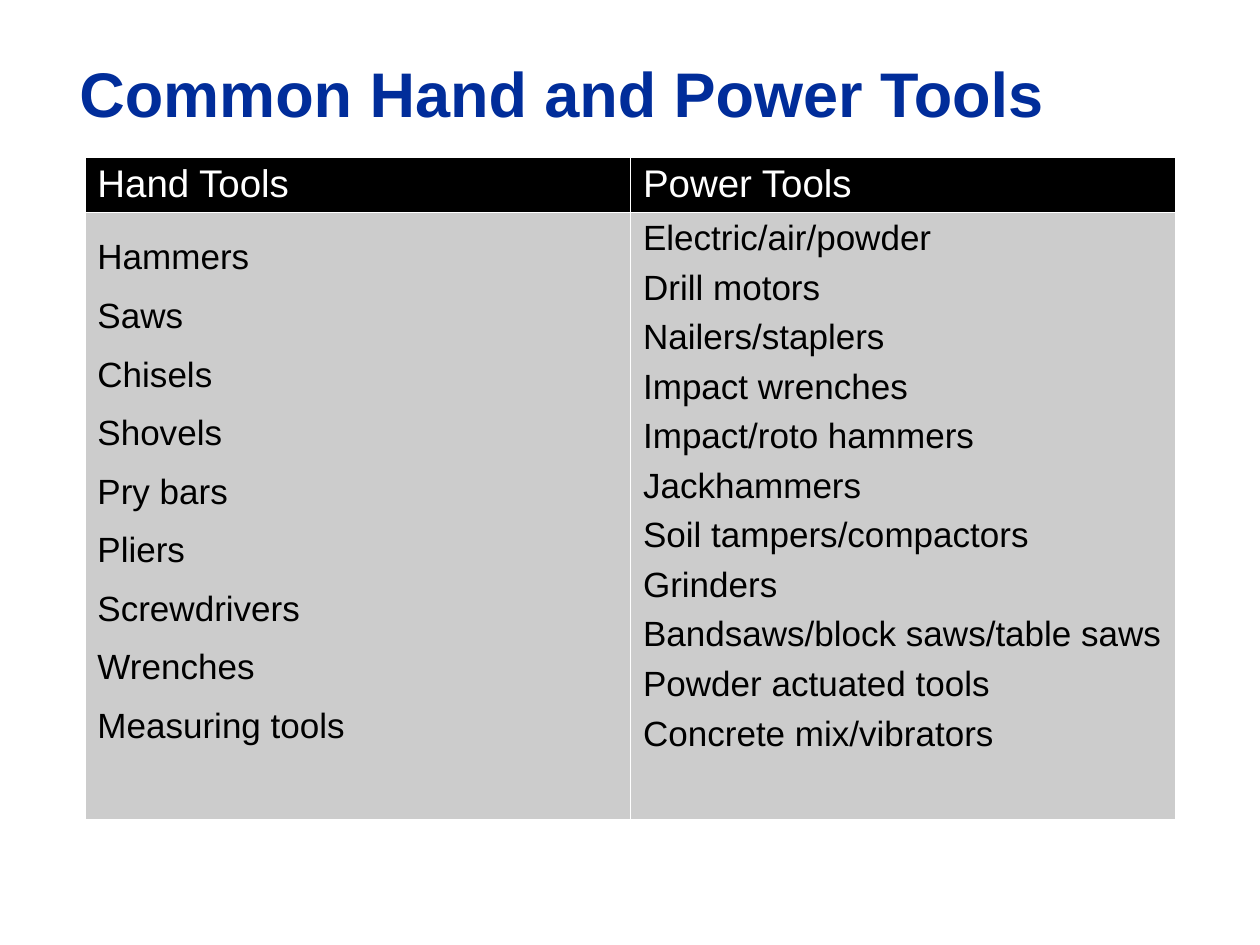
from dataclasses import dataclass

from lxml import etree
from pptx import Presentation
from pptx.dml.color import RGBColor
from pptx.enum import text
from pptx.oxml import ns
from pptx.util import Cm, Pt

FONT = "Arial"
WHITE = RGBColor(0xFF, 0xFF, 0xFF)
BLACK = RGBColor(0x00, 0x00, 0x00)
GREY = RGBColor(0xCC, 0xCC, 0xCC)
NAVY = RGBColor(0x01, 0x2D, 0x9A)


@dataclass
class ToolGroup:
    heading: str
    tools: list[str]
    line_spacing: float = 1.0
    space_after: float = 0


GROUPS = [
    ToolGroup(
        "Hand Tools",
        ["Hammers", "Saws", "Chisels", "Shovels", "Pry bars", "Pliers",
         "Screwdrivers", "Wrenches", "Measuring tools"],
        line_spacing=1.5,
    ),
    ToolGroup(
        "Power Tools",
        ["Electric/air/powder", "Drill motors", "Nailers/staplers",
         "Impact wrenches", "Impact/roto hammers", "Jackhammers",
         "Soil tampers/compactors", "Grinders",
         "Bandsaws/block saws/table saws", "Powder actuated tools",
         "Concrete mix/vibrators"],
        space_after=6,
    ),
]


def format_text(frame, size: float, color: RGBColor, bold: bool = False) -> None:
    for paragraph in frame.paragraphs:
        for run in paragraph.runs:
            run.font.name = FONT
            run.font.size = Pt(size)
            run.font.bold = bold
            run.font.color.rgb = color


def add_borders(cell, color: RGBColor, width: float) -> None:
    """Draw all four cell borders; they must precede the fill in the XML."""
    properties = cell._tc.get_or_add_tcPr()
    for position, side in enumerate(("a:lnL", "a:lnR", "a:lnT", "a:lnB")):
        line = etree.Element(ns.qn(side), w=str(Pt(width)))
        fill = etree.SubElement(line, ns.qn("a:solidFill"))
        etree.SubElement(fill, ns.qn("a:srgbClr"), val=str(color))
        properties.insert(position, line)


def fill_cell(cell, content: str, size: float, color: RGBColor, background: RGBColor) -> None:
    cell.text_frame.text = content
    format_text(cell.text_frame, size, color)
    cell.fill.solid()
    cell.fill.fore_color.rgb = background
    add_borders(cell, WHITE, 1)


def add_title(slide, content: str) -> None:
    title = slide.shapes.add_textbox(Cm(1.47), Cm(1.07), Cm(22.43), Cm(1.55))
    frame = title.text_frame
    frame.word_wrap = True
    frame.vertical_anchor = text.MSO_ANCHOR.BOTTOM
    frame.margin_left = frame.margin_right = Cm(0.13)
    frame.margin_top = frame.margin_bottom = 0
    frame.text = content
    format_text(frame, 36, NAVY, bold=True)


def add_tool_table(slide, groups: list[ToolGroup]) -> None:
    header_height, body_height = Cm(1.1), Cm(12.24)
    table = slide.shapes.add_table(
        2, len(groups), Cm(1.71), Cm(3.16), Cm(22), header_height + body_height
    ).table
    table.rows[0].height = header_height
    table.rows[1].height = body_height
    for column, group in enumerate(groups):
        fill_cell(table.cell(0, column), group.heading, 22, WHITE, BLACK)
        body = table.cell(1, column)
        fill_cell(body, "\n".join(group.tools), 20, BLACK, GREY)
        for paragraph in body.text_frame.paragraphs:
            paragraph.line_spacing = group.line_spacing
            paragraph.space_after = Pt(group.space_after)


def main() -> None:
    presentation = Presentation()
    presentation.slide_width = Cm(25.4)
    presentation.slide_height = Cm(19.05)
    slide = presentation.slides.add_slide(presentation.slide_layouts[6])
    add_tool_table(slide, GROUPS)
    add_title(slide, "Common Hand and Power Tools")
    presentation.save("out.pptx")


if __name__ == "__main__":
    main()
